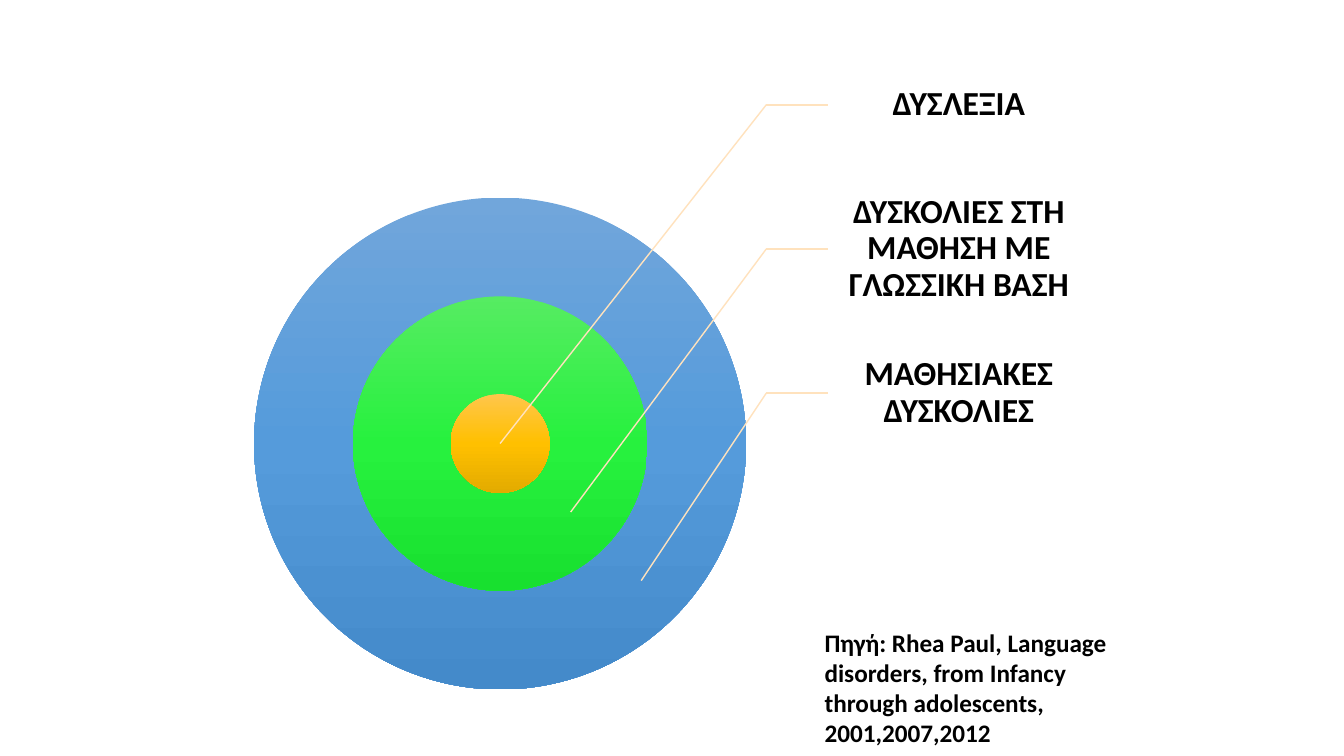
from copy import deepcopy
from dataclasses import dataclass

from pptx import Presentation
from pptx.dml.color import RGBColor
from pptx.enum.shapes import MSO_CONNECTOR, MSO_SHAPE
from pptx.enum.text import MSO_ANCHOR, MSO_AUTO_SIZE, PP_ALIGN
from pptx.oxml import parse_xml
from pptx.oxml.ns import nsdecls, qn
from pptx.util import Emu, Pt

ELLIPSE = MSO_SHAPE.OVAL
STRAIGHT = MSO_CONNECTOR.STRAIGHT
MIDDLE = MSO_ANCHOR.MIDDLE
CENTER = PP_ALIGN.CENTER
GROW = MSO_AUTO_SIZE.SHAPE_TO_FIT_TEXT
PX = 9144
LEFT_SIDE = 1


@dataclass(frozen=True)
class Theme:
    font: str = "Calibri"
    text: str = "000000"
    leader: str = "FFE2BD"
    blue: tuple = ("71A6DB", "559BDB", "448ACA")
    green: tuple = ("56EC62", "27F13E", "18E02F")
    gold: tuple = ("FFC64B", "FFC000", "E3AB00")
    label_size: int = 24
    source_size: int = 18
    leader_width: int = 1


def px(*lengths):
    return [Emu(length * PX) for length in lengths]


class Page:
    def __init__(self, slide, theme):
        self.shapes = slide.shapes
        self.theme = theme

    def disc(self, center_x, center_y, diameter, colors):
        radius = diameter // 2
        disc = self.shapes.add_shape(
            ELLIPSE, *px(center_x - radius, center_y - radius, diameter, diameter))
        disc.shadow.inherit = False
        disc.line.fill.background()
        disc.fill.gradient()
        disc.fill.gradient_angle = 270
        stop_list = disc.element.spPr.find(".//" + qn("a:gsLst"))
        stop_list.insert(1, deepcopy(stop_list[0]))
        for index, (stop, color) in enumerate(zip(disc.fill.gradient_stops, colors)):
            stop.position = index / 2
            stop.color.rgb = RGBColor.from_string(color)

    def text(self, left, top, width, height, words, size):
        box = self.shapes.add_textbox(*px(left, top, width, height))
        frame = box.text_frame
        frame.word_wrap = True
        frame.text = words
        font = frame.paragraphs[0].runs[0].font
        font.name = self.theme.font
        font.size = Pt(size)
        font.bold = True
        font.color.rgb = RGBColor.from_string(self.theme.text)
        return box

    def label(self, left, top, width, height, words):
        box = self.text(left, top, width, height, words, self.theme.label_size)
        frame = box.text_frame
        frame.vertical_anchor = MIDDLE
        frame.margin_left, frame.margin_top, frame.margin_right, frame.margin_bottom = px(19, 3, 3, 3)
        para = frame.paragraphs[0]
        para.alignment = CENTER
        para.line_spacing = 0.9
        return box

    def source(self, left, top, width, height, words):
        box = self.text(left, top, width, height, words, self.theme.source_size)
        box.text_frame.auto_size = GROW

    def leader(self, start, end, target=None):
        line = self.shapes.add_connector(STRAIGHT, *px(*start, *end))
        line.line.color.rgb = RGBColor.from_string(self.theme.leader)
        line.line.width = Pt(self.theme.leader_width)
        line.element.spPr.append(parse_xml(f"<a:effectLst {nsdecls('a')}/>"))
        if target is not None:
            line.end_connect(target, LEFT_SIDE)


def main():
    deck = Presentation()
    deck.slide_width, deck.slide_height = px(1333, 750)
    theme = Theme()
    page = Page(deck.slides.add_slide(deck.slide_layouts[6]), theme)

    center_x, center_y = 496, 440
    for diameter, colors in ((488, theme.blue), (292, theme.green), (98, theme.gold)):
        page.disc(center_x, center_y, diameter, colors)

    label_left, label_top, label_width, label_height = 821, 33, 244, 142
    label_step, elbow_x = 143, 760
    labels = ("ΔΥΣΛΕΞΙΑ", "ΔΥΣΚΟΛΙΕΣ ΣΤΗ ΜΑΘΗΣΗ ΜΕ ΓΛΩΣΣΙΚΗ ΒΑΣΗ", "ΜΑΘΗΣΙΑΚΕΣ ΔΥΣΚΟΛΙΕΣ")
    for index, words in enumerate(labels):
        top = label_top + index * label_step
        elbow = (elbow_x, top + label_height // 2)
        box = page.label(label_left, top, label_width, label_height, words)
        page.leader(elbow, (label_left, elbow[1]), box)
        page.leader(elbow, (center_x + 70 * index, center_y + 68 * index))

    page.source(808, 617, 308, 131,
                "Πηγή: Rhea Paul, Language disorders, from Infancy through adolescents, 2001,2007,2012")
    deck.save("out.pptx")


if __name__ == "__main__":
    main()
